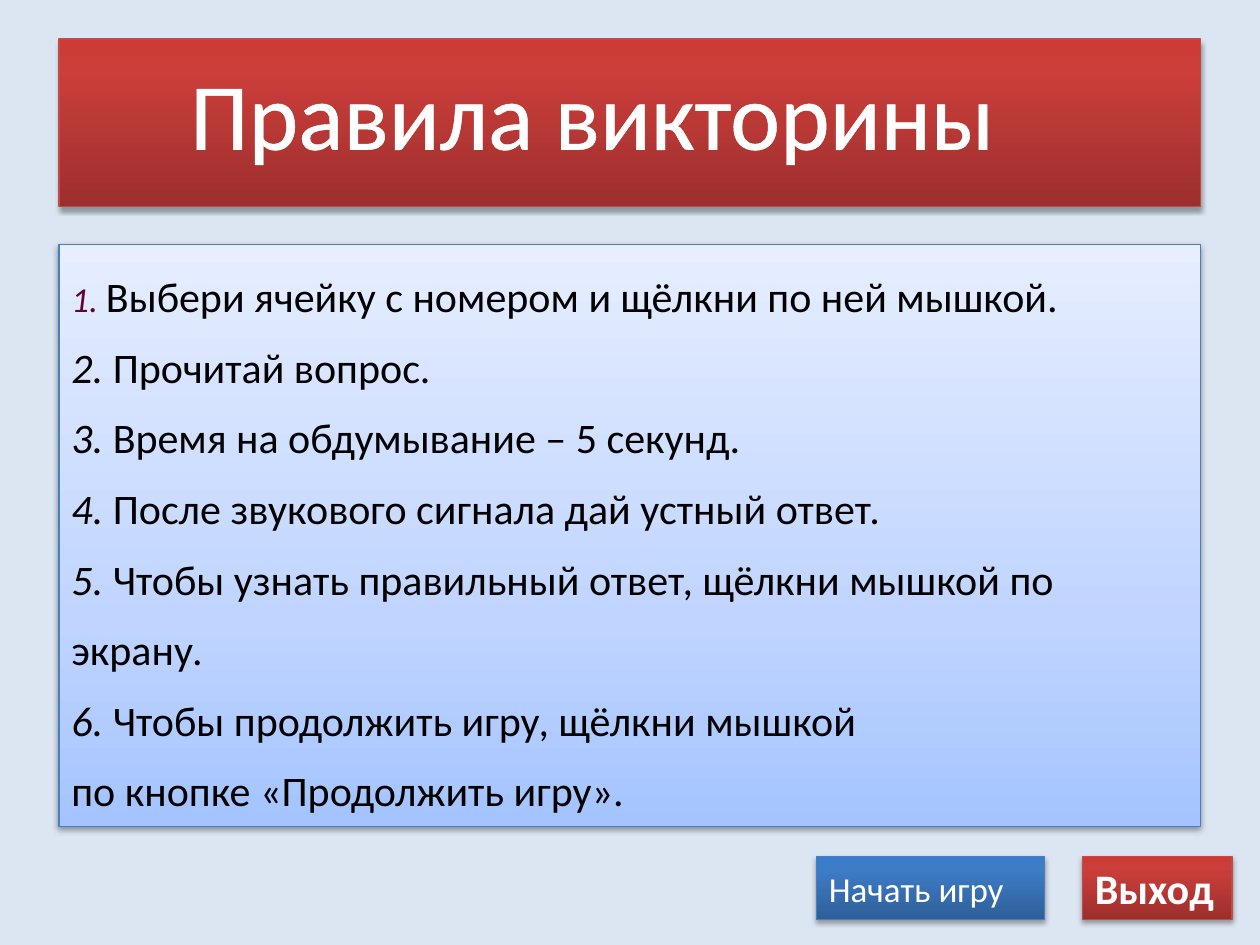
"""Build the quiz rules slide with its two navigation buttons."""
from lxml import etree
from pptx import Presentation
from pptx.dml.color import RGBColor
from pptx.enum.shapes import MSO_SHAPE
from pptx.enum.text import MSO_ANCHOR, MSO_AUTO_SIZE, PP_ALIGN
from pptx.oxml.ns import qn
from pptx.util import Cm, Pt

RECTANGLE = MSO_SHAPE.RECTANGLE
TOP, MIDDLE = MSO_ANCHOR.TOP, MSO_ANCHOR.MIDDLE
GROW, FIXED = MSO_AUTO_SIZE.SHAPE_TO_FIT_TEXT, MSO_AUTO_SIZE.NONE
LEFT = PP_ALIGN.LEFT

FONT = "Calibri"
BACKGROUND = RGBColor(0xDC, 0xE6, 0xF2)
WHITE = RGBColor(0xFF, 0xFF, 0xFF)
BLACK = RGBColor(0x00, 0x00, 0x00)
PLUM = RGBColor(0x66, 0x00, 0x33)
BLUE_LINE = RGBColor(0x4B, 0x7E, 0xBC)
RED_LINE = RGBColor(0xBF, 0x4C, 0x48)

RED = ([(0, RGBColor(0x9C, 0x2F, 0x2D)), (80, RGBColor(0xCB, 0x3E, 0x3A)),
        (100, RGBColor(0xCE, 0x3B, 0x37))], RED_LINE, 35, 1.8)
BLUE = ([(0, RGBColor(0x2F, 0x5F, 0x99)), (80, RGBColor(0x3D, 0x7C, 0xC7)),
         (100, RGBColor(0x3A, 0x7C, 0xCB))], BLUE_LINE, 35, 1.8)
PALE_BLUE = ([(0, RGBColor(0xA4, 0xC4, 0xFF)), (35, RGBColor(0xBF, 0xD4, 0xFF)),
              (100, RGBColor(0xE6, 0xEE, 0xFF))], BLUE_LINE, 38, 1.6)

TITLE = "Правила викторины"
RULES = [
    ("1. ", "Выбери ячейку с номером и щёлкни по ней мышкой."),
    ("2.", " Прочитай вопрос."),
    ("3.", " Время на обдумывание – 5 секунд."),
    ("4.", " После звукового сигнала дай устный ответ."),
    ("5.", " Чтобы узнать правильный ответ, щёлкни мышкой по экрану."),
    ("6.", " Чтобы продолжить игру, щёлкни мышкой"),
    ("", "по кнопке «Продолжить игру»."),
]
BUTTONS = [
    ("Начать игру", 16.46, 4.6, BLUE, 20, False),
    ("Выход", 21.82, 3.02, RED, 24, True),
]
MARGIN, PANEL_WIDTH = 1.19, 23.01
BUTTON_TOP, BUTTON_HEIGHT = 17.27, 1.27


def add_color(parent, color, alpha=None):
    node = etree.SubElement(parent, qn("a:srgbClr"), val=str(color))
    if alpha is not None:
        etree.SubElement(node, qn("a:alpha"), val=str(alpha * 1000))


def add_panel(slide, left, top, width, height, style):
    stops, line_color, shadow_alpha, shadow_distance = style
    panel = slide.shapes.add_shape(RECTANGLE, Cm(left), Cm(top), Cm(width), Cm(height))
    panel.fill.gradient()
    panel.fill.gradient_angle = 90
    properties = panel._element.spPr
    stop_list = properties.find(".//" + qn("a:gsLst"))
    for default_stop in list(stop_list):
        stop_list.remove(default_stop)
    for position, color in stops:
        add_color(etree.SubElement(stop_list, qn("a:gs"), pos=str(position * 1000)), color)
    panel.line.color.rgb = line_color
    panel.line.width = Pt(0.75)
    panel.shadow.inherit = False
    shadow = etree.SubElement(
        properties.find(qn("a:effectLst")), qn("a:outerShdw"), blurRad=str(Pt(3.1)),
        dist=str(Pt(shadow_distance)), dir="5400000", rotWithShape="0")
    add_color(shadow, BLACK, shadow_alpha)
    return panel


def write_text(holder, paragraphs, wrap=False, anchor=TOP, auto_size=FIXED,
               spacing=None, outline=None):
    frame = holder.text_frame
    frame.word_wrap = wrap
    frame.auto_size = auto_size
    frame.vertical_anchor = anchor
    for index, runs in enumerate(paragraphs):
        paragraph = frame.add_paragraph() if index else frame.paragraphs[0]
        paragraph.alignment = LEFT
        if spacing:
            paragraph.line_spacing = spacing
        for text, size, color, bold, italic in runs:
            run = paragraph.add_run()
            run.text = text
            font = run.font
            font.name, font.size, font.bold, font.italic = FONT, Pt(size), bold, italic
            font.color.rgb = color
            if outline:
                border = etree.Element(qn("a:ln"), w=str(Pt(outline)))
                add_color(etree.SubElement(border, qn("a:solidFill")), color)
                run._r.get_or_add_rPr().insert(0, border)


def rule_runs(index, number, text):
    size, color = (24, BLACK) if index else (20, PLUM)
    runs = [(number, size, color, False, True), (text, 24, BLACK, False, False)]
    return [run for run in runs if run[0]]


def main():
    deck = Presentation()
    deck.slide_width, deck.slide_height = Cm(25.4), Cm(19.05)
    slide = deck.slides.add_slide(deck.slide_layouts[6])
    slide.background.fill.solid()
    slide.background.fill.fore_color.rgb = BACKGROUND

    rules = add_panel(slide, MARGIN, 4.93, PANEL_WIDTH, 11.73, PALE_BLUE)
    write_text(rules, [rule_runs(i, *rule) for i, rule in enumerate(RULES)],
               wrap=True, auto_size=GROW, spacing=1.4)

    for label, left, width, style, size, bold in BUTTONS:
        button = add_panel(slide, left, BUTTON_TOP, width, BUTTON_HEIGHT, style)
        write_text(button, [[(label, size, WHITE, bold, False)]], anchor=MIDDLE)

    add_panel(slide, MARGIN, 0.79, PANEL_WIDTH, 3.38, RED)
    title = slide.shapes.add_textbox(Cm(3.58), Cm(0.99), Cm(18.34), Cm(2.57))
    write_text(title, [[(TITLE, 54, WHITE, False, False)]], auto_size=GROW, outline=1.45)

    deck.save("out.pptx")


if __name__ == "__main__":
    main()
